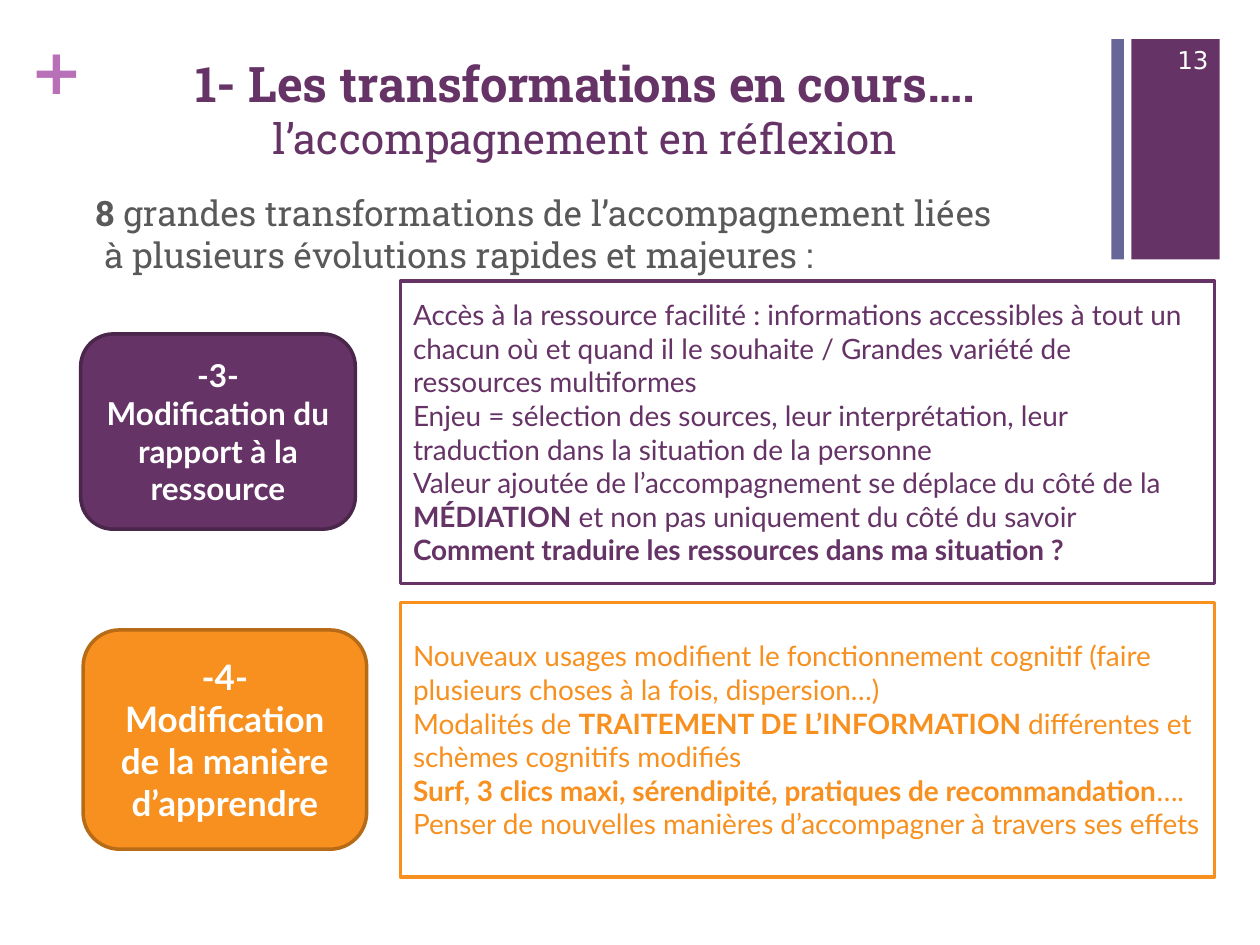
import pptx
import pptx.util
import pptx.dml.color
import pptx.enum.shapes
import pptx.enum.text

SHAPE = pptx.enum.shapes.MSO_SHAPE
ALIGN = pptx.enum.text.PP_ALIGN
ANCHOR = pptx.enum.text.MSO_ANCHOR
PURPLE, ORANGE, WHITE = "663366", "F7901E", "FFFFFF"
HEAD, BODY, PLAIN = "Roboto Slab", "Lato", "DejaVu Sans"

# Content: a paragraph is a list of (text, bold) runs
INTRO = [
    [("8", True), (" grandes transformations de l’accompagnement liées", False)],
    [("à plusieurs évolutions rapides et majeures :", False)],
]
TOPICS = [
    dict(color=PURPLE, edge="4B264B", size=18,
         label_at=(0.64, 2.65, 2.18, 1.55), top=2.23, height=2.4,
         label=["-3-", "Modification du rapport à la ressource"],
         detail=[
             [("Accès à la ressource facilité : informations accessibles à tout un chacun "
               "où et quand il le souhaite / Grandes variété de ressources multiformes", False)],
             [("Enjeu = sélection des sources, leur interprétation, leur traduction "
               "dans la situation de la personne", False)],
             [("Valeur ajoutée de l’accompagnement se déplace du côté de la ", False),
              ("MÉDIATION", True),
              (" et non pas uniquement du côté du savoir", False)],
             [("Comment traduire les ressources dans ma situation ?", True)],
         ]),
    dict(color=ORANGE, edge="B76B16", size=20,
         label_at=(0.66, 5, 2.25, 1.74), top=4.78, height=2.18,
         label=["-4-", "Modification de la manière d’apprendre"],
         detail=[
             [("Nouveaux usages modifient le fonctionnement cognitif (faire plusieurs "
               "choses à la fois, dispersion…)", False)],
             [("Modalités de ", False), ("TRAITEMENT DE L’INFORMATION ", True),
              ("différentes et schèmes cognitifs modifiés", False)],
             [("Surf, 3 clics maxi, sérendipité, pratiques de recommandation", True),
              ("…. Penser de nouvelles manières d’accompagner à travers ses effets", False)],
         ]),
]
DETAIL_LEFT, DETAIL_WIDTH = 3.18, 6.46


def rgb(color):
    return pptx.dml.color.RGBColor.from_string(color)


def inches(box):
    return [pptx.util.Inches(v) for v in box]


def add_run(p, text, size, font, color, bold=False):
    r = p.add_run()
    r.text = text
    r.font.size = pptx.util.Pt(size)
    r.font.name = font
    r.font.bold = bold
    r.font.color.rgb = rgb(color)


def write(sp, paragraphs, size, font, color, align=ALIGN.LEFT, anchor=ANCHOR.MIDDLE):
    tf = sp.text_frame
    tf.word_wrap = True
    tf.vertical_anchor = anchor
    for i, runs in enumerate(paragraphs):
        p = tf.paragraphs[0] if i == 0 else tf.add_paragraph()
        p.alignment = align
        for text, bold in runs:
            add_run(p, text, size, font, color, bold)
    return tf


def add_box(s, kind, box, fill, line=None):
    sp = s.shapes.add_shape(kind, *inches(box))
    sp.shadow.inherit = False
    sp.fill.solid()
    sp.fill.fore_color.rgb = rgb(fill)
    if line:
        sp.line.color.rgb = rgb(line)
        sp.line.width = pptx.util.Pt(2)
    else:
        sp.line.fill.background()
    return sp


def main():
    prs = pptx.Presentation()
    prs.slide_width, prs.slide_height = inches((10, 7.5))
    s = prs.slides.add_slide(prs.slide_layouts[6])

    # Corner bars, plus sign and page number
    add_box(s, SHAPE.RECTANGLE, (8.98, 0.31, 0.7, 1.75), PURPLE)
    add_box(s, SHAPE.RECTANGLE, (8.82, 0.31, 0.1, 1.75), "666699")
    plus = s.shapes.add_textbox(*inches((0.24, 0.25, 0.28, 0.61)))
    tf = write(plus, [[("+", True)]], 36, PLAIN, "B870B8", anchor=ANCHOR.TOP)
    tf.margin_left = tf.margin_right = tf.margin_top = tf.margin_bottom = 0
    tf.word_wrap = False
    number = s.shapes.add_textbox(*inches((9.08, 0.27, 0.61, 0.4)))
    write(number, [[("13", False)]], 14, PLAIN, WHITE, ALIGN.RIGHT)

    # Title, in two sizes
    title = s.shapes.add_textbox(*inches((0.43, 0.33, 8.43, 1.06)))
    tf = write(title, [[("1- Les transformations en cours…. ", True)]],
               28, HEAD, PURPLE, ALIGN.CENTER)
    add_run(tf.paragraphs[0], "l’accompagnement en réflexion", 24, HEAD, PURPLE)

    # Introduction, second line slightly indented
    intro = s.shapes.add_textbox(*inches((0.66, 1.47, 8.1, 0.8)))
    tf = write(intro, INTRO, 20, HEAD, "595959", anchor=ANCHOR.TOP)
    tf.paragraphs[1]._p.get_or_add_pPr().set("marL", str(pptx.util.Inches(0.07)))

    # Topics: label on the left, detail on the right
    for topic in TOPICS:
        label = add_box(s, SHAPE.ROUNDED_RECTANGLE, topic["label_at"],
                        topic["color"], topic["edge"])
        write(label, [[(text, True)] for text in topic["label"]],
              topic["size"], BODY, WHITE, ALIGN.CENTER)
        detail = add_box(s, SHAPE.RECTANGLE,
                         (DETAIL_LEFT, topic["top"], DETAIL_WIDTH, topic["height"]),
                         WHITE, topic["color"])
        write(detail, topic["detail"], 16, BODY, topic["color"])

    prs.save("out.pptx")


if __name__ == "__main__":
    main()
